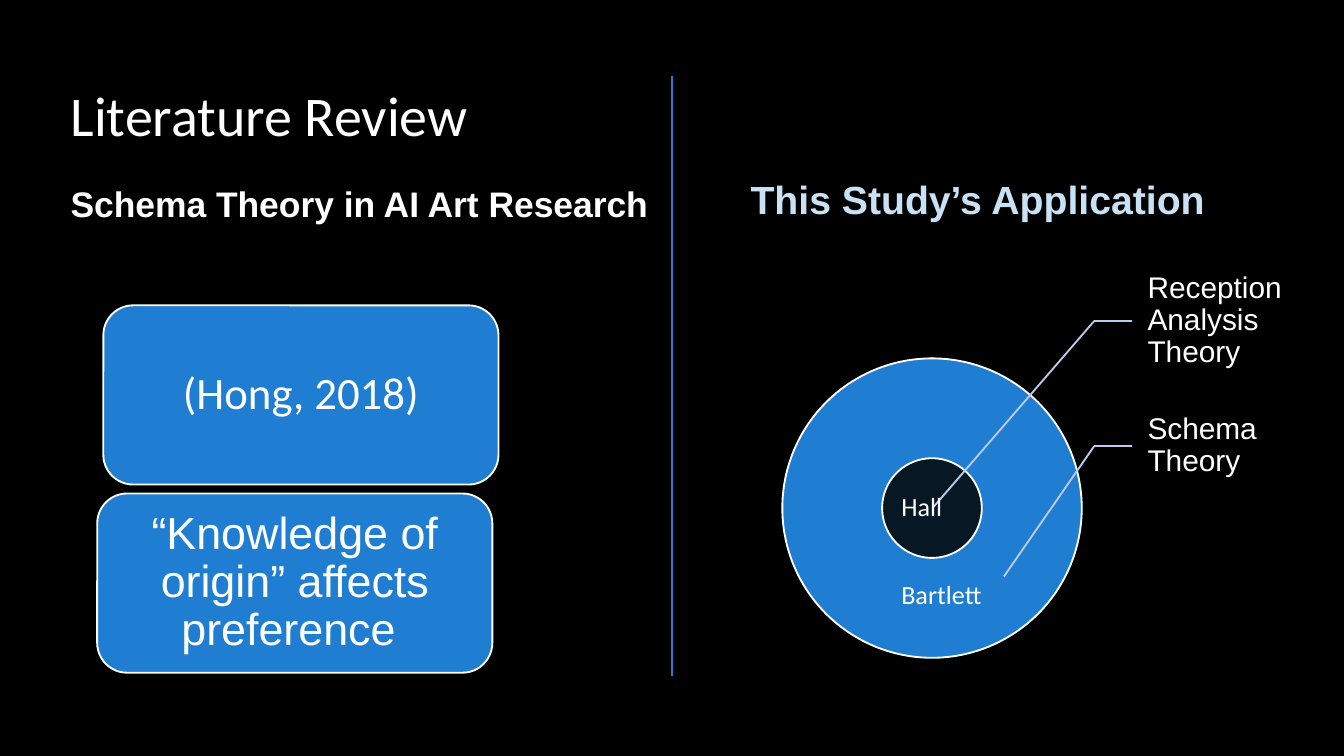
from lxml.etree import SubElement
from pptx import Presentation
from pptx.dml.color import RGBColor
from pptx.enum.shapes import MSO_CONNECTOR, MSO_SHAPE
from pptx.enum.text import MSO_ANCHOR, MSO_AUTO_SIZE, PP_ALIGN
from pptx.oxml.ns import qn
from pptx.util import Pt

COLORS = {
    "background": "000000",
    "text": "FFFFFF",
    "heading": "C8E1F4",
    "blue": "1F7ED2",
    "navy": "071824",
    "divider": "217ED3",
    "leader": "BBCBEA",
}

TITLE = "Literature Review"
# text, left, top, width, height, size, colour
HEADINGS = [
    ("Schema Theory in AI Art Research", 32.4, 95, 371.5, 30, 19, "text"),
    ("This Study’s Application", 396.7, 91.4, 276.5, 33, 21, "heading"),
]
# text, left, top, font
CARDS = [
    ("(Hong, 2018)", 55.4, 163.6, "Calibri"),
    ("“Knowledge of origin” affects preference ", 52.1, 264.4, "Arial"),
]
CARD_SIZE = (211.7, 96)
CIRCLE_CENTER = (499.3, 272.2)
# diameter, fill
CIRCLES = [(160.4, "blue"), (53.4, "navy")]
# text, centre line, width, leader target
CALLOUTS = [
    ("Reception Analysis Theory", 172, 98, (499.6, 272.2)),
    ("Schema Theory", 239, 80, (537.8, 308.9)),
]
CALLOUT_HEIGHT = 67
ELBOW_X, CALLOUT_X = 586.2, 606.2
# text, left, top, width
AUTHORS = [("Hall", 477.4, 260, 48), ("Bartlett", 477.4, 307.3, 68.4)]
DIVIDER = ((360, 40.5), (360, 362.3))
MARGINS = (5.4, 2.7, 5.4, 2.7)


def color(name):
    return RGBColor.from_string(COLORS[name])


def write(shape, text, size, font="Arial", color_name="text", bold=False,
          align=PP_ALIGN.LEFT, anchor=MSO_ANCHOR.TOP, margins=MARGINS, spacing=1.0):
    frame = shape.text_frame
    frame.word_wrap = True
    frame.auto_size = MSO_AUTO_SIZE.NONE
    frame.vertical_anchor = anchor
    (frame.margin_left, frame.margin_top,
     frame.margin_right, frame.margin_bottom) = map(Pt, margins)
    paragraph = frame.paragraphs[0]
    paragraph.alignment = align
    paragraph.line_spacing = spacing
    run = paragraph.add_run()
    run.text = text
    run.font.size = Pt(size)
    run.font.name = font
    run.font.bold = bold
    run.font.color.rgb = color(color_name)


def add_text(slide, box, text, size, **style):
    write(slide.shapes.add_textbox(*map(Pt, box)), text, size, **style)


def add_outlined(slide, kind, box, fill):
    shape = slide.shapes.add_shape(kind, *map(Pt, box))
    shape.shadow.inherit = False
    shape.fill.solid()
    shape.fill.fore_color.rgb = color(fill)
    shape.line.color.rgb = color("text")
    shape.line.width = Pt(1)
    return shape


def add_line(slide, start, end, color_name, width):
    line = slide.shapes.add_connector(MSO_CONNECTOR.STRAIGHT, *map(Pt, start + end))
    line.line.color.rgb = color(color_name)
    line.line.width = Pt(width)
    SubElement(line._element.spPr, qn("a:effectLst"))


def main():
    presentation = Presentation()
    presentation.slide_width, presentation.slide_height = Pt(720), Pt(405)
    slide = presentation.slides.add_slide(presentation.slide_layouts[5])
    slide.background.fill.solid()
    slide.background.fill.fore_color.rgb = color("background")

    title = slide.shapes.title
    title.left, title.top, title.width, title.height = map(Pt, (32.4, 40.3, 342, 41.8))
    write(title, TITLE, 30, font="Calibri")

    for text, left, top, width, height, size, color_name in HEADINGS:
        add_text(slide, (left, top, width, height), text, size,
                 color_name=color_name, bold=True)

    for text, left, top, font in CARDS:
        card = add_outlined(slide, MSO_SHAPE.ROUNDED_RECTANGLE,
                            (left, top, *CARD_SIZE), "blue")
        write(card, text, 24, font=font, align=PP_ALIGN.CENTER,
              anchor=MSO_ANCHOR.MIDDLE, margins=(7.2, 3.6, 7.2, 3.6), spacing=0.9)

    center_x, center_y = CIRCLE_CENTER
    for diameter, fill in CIRCLES:
        add_outlined(slide, MSO_SHAPE.OVAL,
                     (center_x - diameter / 2, center_y - diameter / 2,
                      diameter, diameter), fill)

    for text, middle, width, target in CALLOUTS:
        add_text(slide, (CALLOUT_X, middle - CALLOUT_HEIGHT / 2, width, CALLOUT_HEIGHT),
                 text, 16, anchor=MSO_ANCHOR.MIDDLE,
                 margins=(8.6, 1.4, 1.4, 1.4), spacing=0.9)
        elbow = (ELBOW_X, middle)
        for end in ((CALLOUT_X, middle), target):
            add_line(slide, elbow, end, "leader", 1)

    add_line(slide, *DIVIDER, "divider", 0.75)
    for text, left, top, width in AUTHORS:
        add_text(slide, (left, top, width, 22.3), text, 14, font="Calibri")

    presentation.save("out.pptx")


if __name__ == "__main__":
    main()
